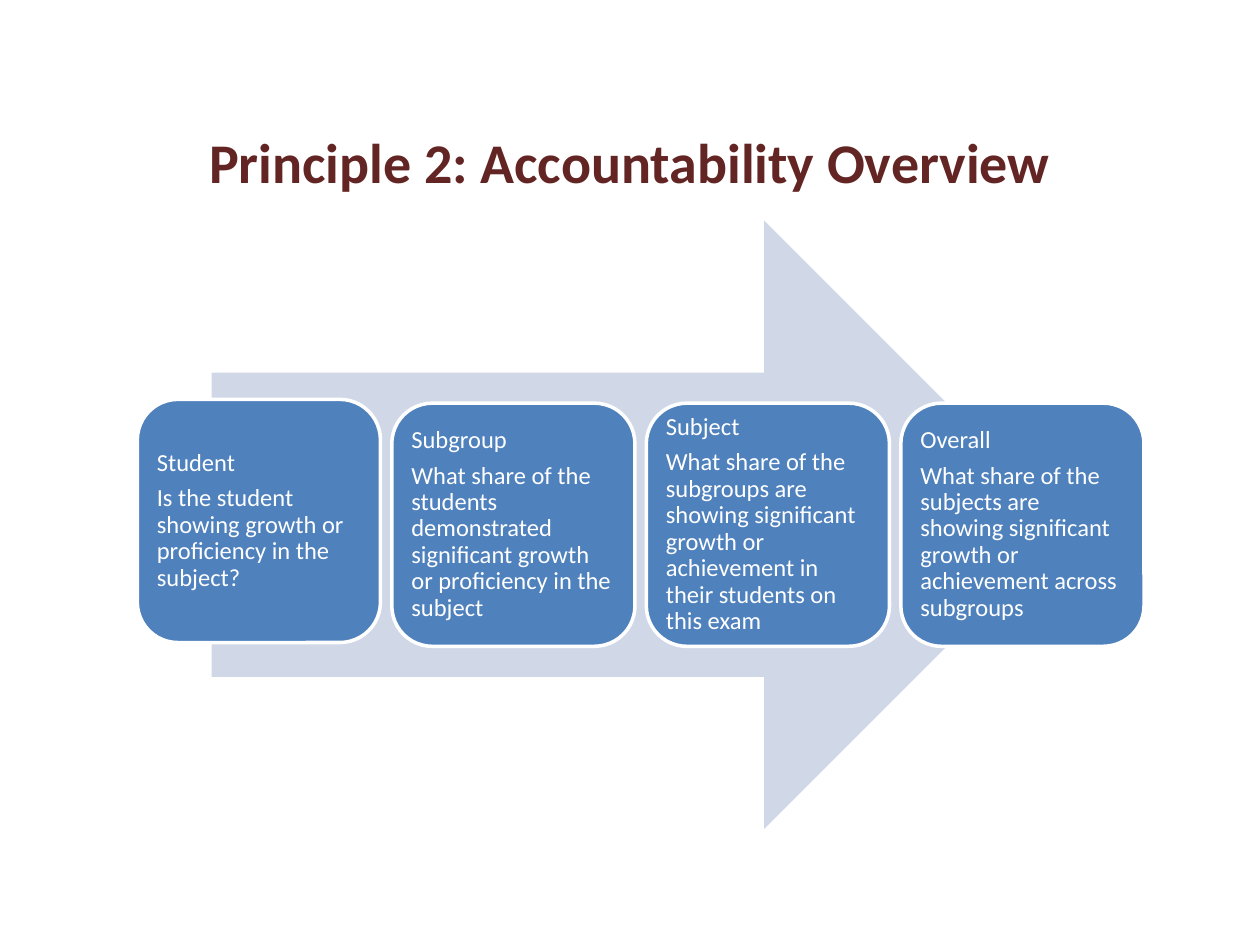
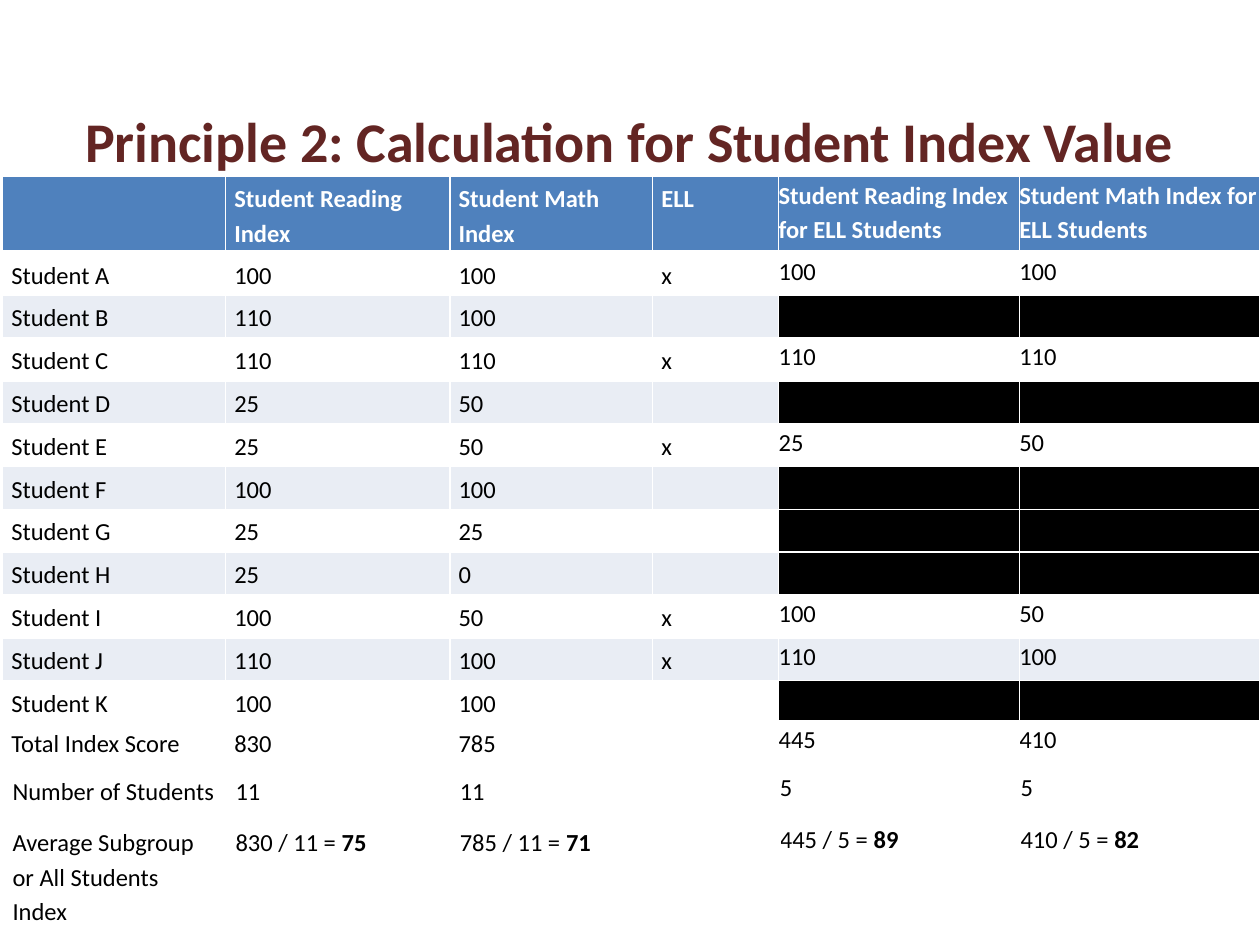
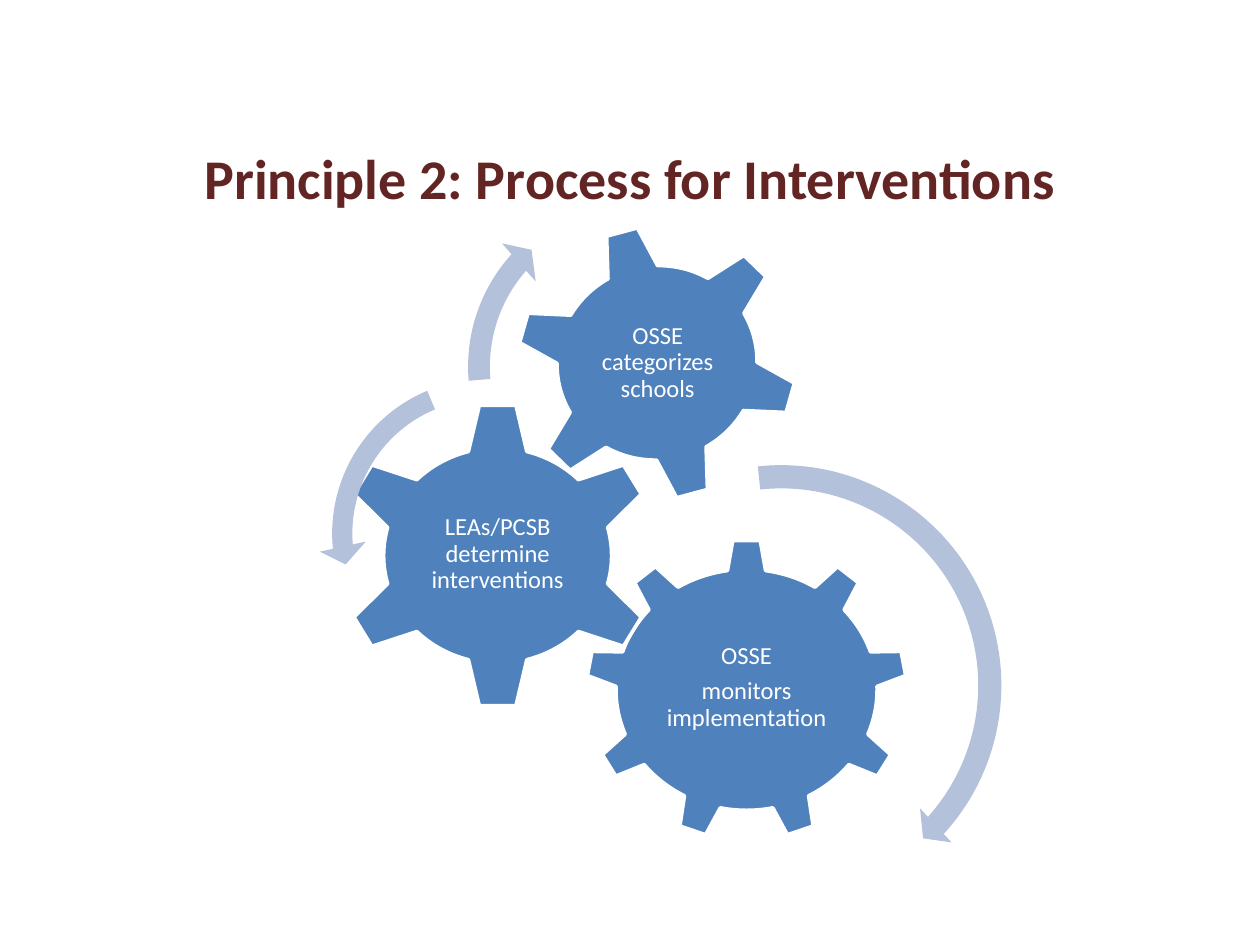
from dataclasses import dataclass
from typing import NamedTuple

from lxml import etree
from pptx import Presentation
from pptx import util as u
from pptx.dml.color import RGBColor
from pptx.enum import shapes, text
from pptx.oxml.ns import qn

WIDTH, HEIGHT = u.Inches(10), u.Inches(7.5)
GRID_COLS, GRID_ROWS = 100, 75
FONT = "Calibri"
BODY_SIZE = 14
COLORS = {
    "title": "632523",
    "blue": "4F81BD",
    "pale_arrow": "D0D8E8",
    "turn_arrow": "B3C1DB",
    "band": "E9EDF4",
    "white": "FFFFFF",
    "black": "000000",
}
MSO = shapes.MSO_SHAPE


class Area(NamedTuple):
    col: float
    row: float
    cols: float
    rows: float

    def inset(self, margin: float) -> "Area":
        return Area(self.col + margin, self.row + margin,
                    self.cols - 2 * margin, self.rows - 2 * margin)


@dataclass
class Card:
    heading: str
    question: str
    row: float = 32


@dataclass
class Gear:
    kind: int
    area: Area
    label: Area
    lines: tuple[str, ...]
    rotation: float = 0


@dataclass
class TurnArrow:
    kind: int
    area: Area
    adjustments: tuple[float, ...]


@dataclass
class Student:
    name: str
    reading: int
    math: int
    ell: bool = False


@dataclass
class Cell:
    words: str = ""
    fill: str = "white"
    color: str = "black"
    bold: bool = False
    result: str = ""


CARDS = [
    Card("Student", "Is the student showing growth or proficiency in the subject?", 31.7),
    Card("Subgroup", "What share of the students demonstrated significant growth "
                     "or proficiency in the subject"),
    Card("Subject", "What share of the subgroups are showing significant growth "
                    "or achievement in their students on this exam"),
    Card("Overall", "What share of the subjects are showing significant growth "
                    "or achievement across subgroups"),
]
CARD_LEFT, CARD_STEP, CARD_SIDE = 10.9, 20.2, 19.3

STUDENTS = [
    Student("A", 100, 100, True),
    Student("B", 110, 100),
    Student("C", 110, 110, True),
    Student("D", 25, 50),
    Student("E", 25, 50, True),
    Student("F", 100, 100),
    Student("G", 25, 25),
    Student("H", 25, 0),
    Student("I", 100, 50, True),
    Student("J", 110, 100, True),
    Student("K", 100, 100),
]
HEADERS = ["", "Student Reading Index", "Student Math Index", "ELL",
           "Student Reading Index for ELL Students",
           "Student Math Index for ELL Students"]
TABLE_COLS = [17.7, 17.8, 16.1, 10, 19.1, 19.1]
FIRST_TIGHT_COL = 4

GEARS = [
    Gear(MSO.GEAR_9, Area(46.5, 42.8, 25.5, 23.9), Area(51.5, 48.4, 15.5, 12.3),
         ("OSSE", "monitors implementation")),
    Gear(MSO.GEAR_6, Area(26.8, 31.9, 25.4, 24.4), Area(33.1, 38, 12.8, 12),
         ("LEAs/PCSB determine interventions",)),
    Gear(MSO.GEAR_6, Area(40.9, 17.8, 22.5, 22), Area(45.9, 22.6, 12.6, 12.4),
         ("OSSE categorizes schools",), 345),
]
TURN_ARROWS = [
    TurnArrow(MSO.CIRCULAR_ARROW, Area(43.6, 36, 36.8, 36.8),
              (0.05, 2.99, 25.29, 158.35, 0.05)),
    TurnArrow(MSO.LEFT_CIRCULAR_ARROW, Area(25.3, 29, 26.7, 26.7),
              (0.06, 4.3, 104.89, 148.38, 0.07)),
    TurnArrow(MSO.CIRCULAR_ARROW, Area(36, 14.7, 28.8, 28.8),
              (0.06, 3.94, 133.14, 105.08, 0.07)),
]


def across(cols: float) -> int:
    return round(cols * WIDTH / GRID_COLS)


def down(rows: float) -> int:
    return round(rows * HEIGHT / GRID_ROWS)


def place(area: Area) -> tuple[int, int, int, int]:
    return across(area.col), down(area.row), across(area.cols), down(area.rows)


def rgb(name: str) -> RGBColor:
    return RGBColor.from_string(COLORS[name])


def add_run(p, words: str, color: str, size: float = BODY_SIZE, bold: bool = False) -> None:
    r = p.add_run()
    r.text = words
    r.font.name, r.font.size, r.font.bold = FONT, u.Pt(size), bold
    r.font.color.rgb = rgb(color)


def add_titled_slide(prs, title: str, row: float):
    s = prs.slides.add_slide(prs.slide_layouts[5])
    sp = s.shapes.title
    sp.left, sp.top, sp.width, sp.height = place(Area(5, row, 90, 12.5))
    tf = sp.text_frame
    tf.vertical_anchor = text.MSO_ANCHOR.MIDDLE
    p = tf.paragraphs[0]
    p.alignment = text.PP_ALIGN.CENTER
    add_run(p, title, "title", 32, True)
    return s


def add_figure(s, kind: int, area: Area, fill: str, outlined: bool = False):
    sp = s.shapes.add_shape(kind, *place(area))
    sp.shadow.inherit = False
    sp.fill.solid()
    sp.fill.fore_color.rgb = rgb(fill)
    if outlined:
        sp.line.color.rgb = rgb("white")
        sp.line.width = u.Pt(2)
    else:
        sp.line.fill.background()
    return sp


def add_label(s, area: Area, lines: tuple[str, ...], margin: float, align: int) -> None:
    tf = s.shapes.add_textbox(*place(area)).text_frame
    tf.word_wrap = True
    tf.vertical_anchor = text.MSO_ANCHOR.MIDDLE
    tf.margin_left = tf.margin_right = across(margin)
    tf.margin_top = tf.margin_bottom = down(margin)
    for i, line in enumerate(lines):
        p = tf.add_paragraph() if i else tf.paragraphs[0]
        p.alignment = align
        p.line_spacing = 0.9
        p.space_after = u.Pt(4.9)
        add_run(p, line, "white")


def add_borders(cell, top: float, bottom: float) -> None:
    tc_pr = cell._tc.get_or_add_tcPr()
    for side, points in (("L", 1), ("R", 1), ("T", top), ("B", bottom)):
        ln = etree.SubElement(tc_pr, qn(f"a:ln{side}"), w=str(u.Pt(points)))
        fill = etree.SubElement(ln, qn("a:solidFill"))
        etree.SubElement(fill, qn("a:srgbClr"), val=COLORS["white"])


def fill_cell(cell, content: Cell, tight: bool) -> None:
    cell.margin_left = cell.margin_right = 0 if tight else across(0.7)
    cell.margin_top = cell.margin_bottom = 0 if tight else down(0.3)
    cell.fill.solid()
    cell.fill.fore_color.rgb = rgb(content.fill)
    p = cell.text_frame.paragraphs[0]
    if not content.words:
        etree.SubElement(p._p, qn("a:endParaRPr"), sz=str(BODY_SIZE * 100))
        return
    p.line_spacing = 1.15
    p.space_after = u.Pt(10)
    add_run(p, content.words, content.color, bold=content.bold)
    if content.result:
        add_run(p, content.result, content.color, bold=True)


def add_grid(s, col: float, row: float, heights: list[float], rows: list[list[Cell]],
             header: bool = False) -> None:
    area = Area(col, row, sum(TABLE_COLS), sum(heights))
    table = s.shapes.add_table(len(rows), len(TABLE_COLS), *place(area)).table
    table.first_row = header
    table.horz_banding = False
    for column, width in zip(table.columns, TABLE_COLS):
        column.width = across(width)
    for i, (height, contents) in enumerate(zip(heights, rows)):
        table.rows[i].height = down(height)
        for j, content in enumerate(contents):
            cell = table.cell(i, j)
            add_borders(cell, 3 if header and i == 1 else 1, 3 if header and i == 0 else 1)
            fill_cell(cell, content, j >= FIRST_TIGHT_COL)


def student_row(student: Student, fill: str) -> list[Cell]:
    scores = [Cell(str(score), fill) for score in (student.reading, student.math)]
    ell_scores = scores if student.ell else [Cell(fill="black")] * 2
    return [Cell(f"Student {student.name}", fill), *scores,
            Cell("x" if student.ell else "", fill), *ell_scores]


def summary_row(label: str, cells: list[Cell]) -> list[Cell]:
    return [Cell(label), *cells[:2], Cell(), *cells[2:]]


def build_overview(prs) -> None:
    s = add_titled_slide(prs, "Principle 2: Accountability Overview", 6.5)
    add_figure(s, MSO.RIGHT_ARROW, Area(16.8, 17.5, 68, 48.3), "pale_arrow")
    for i, card in enumerate(CARDS):
        area = Area(CARD_LEFT + i * CARD_STEP, card.row, CARD_SIDE, CARD_SIDE)
        add_figure(s, MSO.ROUNDED_RECTANGLE, area, "blue", True)
        add_label(s, area.inset(0.95), (card.heading, card.question), 0.6,
                  text.PP_ALIGN.LEFT)


def build_calculation(prs) -> None:
    s = add_titled_slide(prs, "Principle 2: Calculation for Student Index Value", 4.9)
    rows = [[Cell(words, "blue", "white", True) for words in HEADERS]]
    rows += [student_row(student, "band" if i % 2 else "white")
             for i, student in enumerate(STUDENTS)]
    add_grid(s, 0.2, 14, [6] + [3.4] * len(STUDENTS), rows, True)

    groups = [STUDENTS, [student for student in STUDENTS if student.ell]]
    totals = [(sum(scores), len(group)) for group in groups
              for scores in ([g.reading for g in group], [g.math for g in group])]
    add_grid(s, 0.2, 57.2, [4], [summary_row(
        "Total Index Score", [Cell(str(total)) for total, _ in totals])])
    add_grid(s, 0.3, 61, [4], [summary_row(
        "Number of Students", [Cell(str(count)) for _, count in totals])])
    add_grid(s, 0.3, 65.1, [8.7], [summary_row(
        "Average Subgroup or All Students Index",
        [Cell(f"{total} / {count} = ", result=str(round(total / count)))
         for total, count in totals])])


def build_interventions(prs) -> None:
    s = add_titled_slide(prs, "Principle 2: Process for Interventions", 7.8)
    for gear in GEARS:
        add_figure(s, gear.kind, gear.area, "blue", True).rotation = gear.rotation
        add_label(s, gear.label, gear.lines, 0.2, text.PP_ALIGN.CENTER)
    for arrow in TURN_ARROWS:
        sp = add_figure(s, arrow.kind, arrow.area, "turn_arrow")
        for i, value in enumerate(arrow.adjustments):
            sp.adjustments[i] = value


def main() -> None:
    prs = Presentation()
    prs.slide_width, prs.slide_height = WIDTH, HEIGHT
    build_overview(prs)
    build_calculation(prs)
    build_interventions(prs)
    prs.save("out.pptx")


if __name__ == "__main__":
    main()
